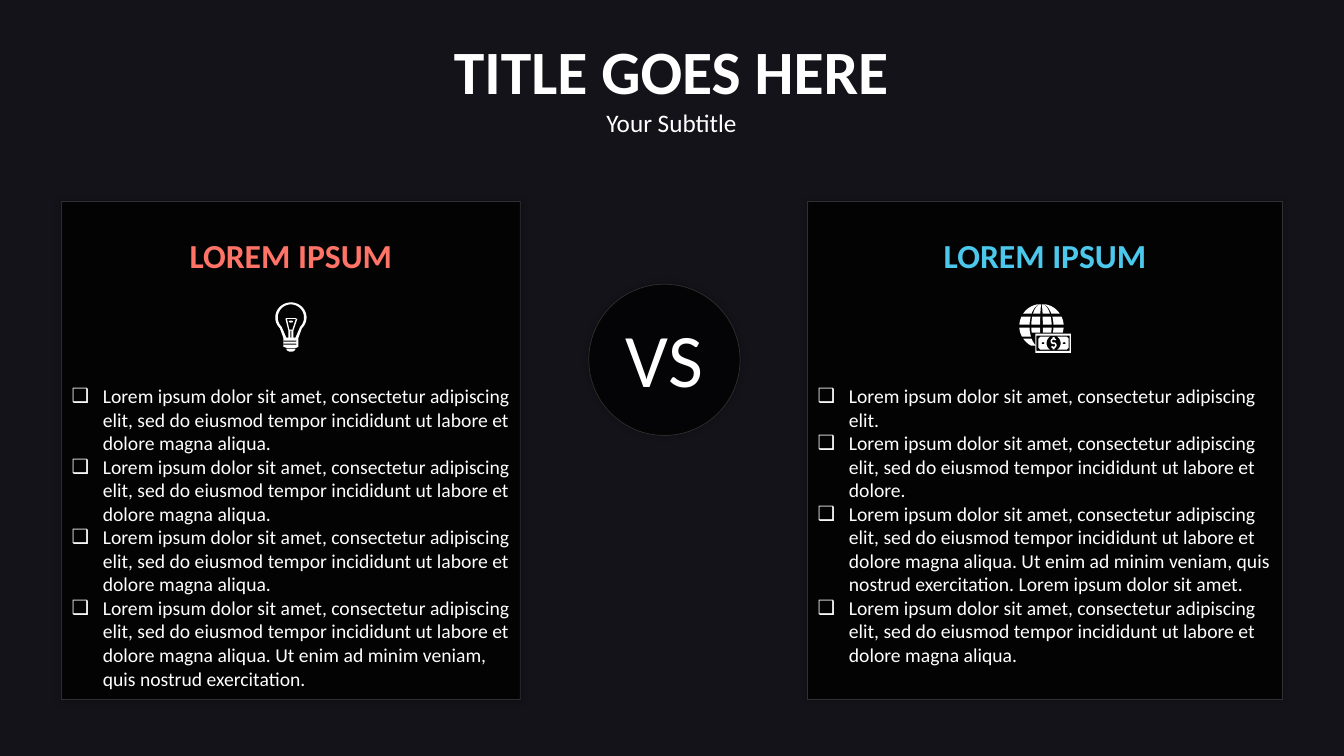
from math import cos, radians, sin, sqrt

from lxml import etree
from pptx import Presentation
from pptx import util as u
from pptx.dml.color import RGBColor
from pptx.enum import shapes, text
from pptx.oxml.ns import qn

# Content
TITLE = "TITLE GOES HERE"
SUBTITLE = "Your Subtitle"
VERSUS = "VS"
LOREM = "Lorem ipsum dolor sit amet, consectetur adipiscing elit"
LABORE = LOREM + ", sed do eiusmod tempor incididunt ut labore et dolore"
ALIQUA = LABORE + " magna aliqua."
VENIAM = ALIQUA + " Ut enim ad minim veniam, quis nostrud exercitation."
CARDS = [
    {"heading": "LOREM IPSUM", "colour": "coral", "left": 0.61, "width": 4.55,
     "points": [ALIQUA, ALIQUA, ALIQUA, VENIAM]},
    {"heading": "LOREM IPSUM", "colour": "sky", "left": 8.01, "width": 4.71,
     "points": [LOREM + ".", LABORE + ".",
                VENIAM + " Lorem ipsum dolor sit amet.", ALIQUA]},
]
SLIDE_SIZE = (13.33, 7.5)


class Theme:
    font = "Calibri"
    colours = {name: RGBColor.from_string(value) for name, value in {
        "background": "524E67", "black": "000000", "white": "FFFFFF",
        "coral": "FF7467", "sky": "4CC8EC"}.items()}
    title, subtitle, versus, heading, body = 44, 18, 54, 24, 14
    outline = 0.5
    card_opacity, circle_opacity, line_opacity, shadow_opacity = 75, 70, 15, 40


# Helpers
def box(left, top, width, height):
    return [u.Inches(value) for value in (left, top, width, height)]


def place(shape, left, top, width, height):
    shape.left, shape.top, shape.width, shape.height = box(left, top, width, height)


def write(shape, lines, align=text.PP_ALIGN.CENTER, bullet=None):
    """Fill a text shape with (words, size, colour, bold) lines."""
    frame = shape.text_frame
    frame.word_wrap = True
    frame.auto_size = text.MSO_AUTO_SIZE.NONE
    frame.vertical_anchor = text.MSO_ANCHOR.TOP
    for index, (words, size, colour, bold) in enumerate(lines):
        paragraph = frame.add_paragraph() if index else frame.paragraphs[0]
        paragraph.text = words
        if bullet:
            properties = paragraph._p.get_or_add_pPr()
            properties.set("marL", str(u.Inches(0.31)))
            properties.set("indent", str(-u.Inches(0.31)))
            etree.SubElement(properties, qn("a:buChar"), char=bullet)
        paragraph.alignment = align
        paragraph.space_before = u.Pt(0)
        font = paragraph.font
        font.name, font.size, font.bold = Theme.font, u.Pt(size), bold
        font.color.rgb = Theme.colours[colour]


def set_opacity(colour_parent, percent):
    colour = next(colour_parent.iter(qn("a:srgbClr")))
    etree.SubElement(colour, qn("a:alpha"), val=str(percent * 1000))


def add_veil(slide, kind, bounds, opacity):
    """Translucent black shape without an outline."""
    veil = slide.shapes.add_shape(kind, *box(*bounds))
    veil.fill.solid()
    veil.fill.fore_color.rgb = Theme.colours["black"]
    set_opacity(veil._element.spPr.find(qn("a:solidFill")), opacity)
    veil.line.fill.background()
    veil.shadow.inherit = False
    return veil


def add_panel(slide, kind, bounds, opacity):
    """Veil with a faint outline and a soft shadow."""
    panel = add_veil(slide, kind, bounds, opacity)
    panel.line.color.rgb = Theme.colours["white"]
    panel.line.width = u.Pt(Theme.outline)
    properties = panel._element.spPr
    set_opacity(properties.find(qn("a:ln")), Theme.line_opacity)
    shadow = etree.SubElement(properties.find(qn("a:effectLst")), qn("a:outerShdw"),
                              blurRad=str(u.Pt(5)), dist="0", dir="0")
    etree.SubElement(shadow, qn("a:srgbClr"), val=str(Theme.colours["black"]))
    set_opacity(shadow, Theme.shadow_opacity)
    return panel


def arc(x, y, rx, ry, start=0, end=360, steps=40):
    angles = [radians(start + (end - start) * i / steps) for i in range(steps + 1)]
    return [(x + rx * cos(a), y + ry * sin(a)) for a in angles]


def rectangle(left, top, right, bottom):
    return [(left, top), (right, top), (right, bottom), (left, bottom)]


def add_outline(group, *contours):
    """One white freeform; a contour inside another cuts a hole."""
    contours = [[(u.Inches(x), u.Inches(y)) for x, y in c] for c in contours]
    builder = group.shapes.build_freeform(*contours[0][0], scale=1.0)
    for index, contour in enumerate(contours):
        if index:
            builder.move_to(*contour[0])
        builder.add_line_segments(contour[1:], close=True)
    outline = builder.convert_to_shape()
    outline.fill.solid()
    outline.fill.fore_color.rgb = Theme.colours["white"]
    outline.line.fill.background()
    outline.shadow.inherit = False


def add_bulb(slide):
    group = slide.shapes.add_group_shape()
    x, y = 2.885, 3.15
    glass = arc(x, y, 0.155, 0.15, 135, 405) + [
        (2.96, 3.35), (2.96, 3.44), (2.94, 3.45), (2.84, 3.45), (2.81, 3.44), (2.81, 3.35)]
    inside = arc(x, y, 0.13, 0.13, 135, 405) + [(2.93, 3.35), (2.84, 3.35)]
    filament = [(2.83, 3.16), (2.95, 3.16), (2.91, 3.28), (2.91, 3.35),
                (2.86, 3.35), (2.86, 3.28)]
    gap = [(2.845, 3.16), (2.935, 3.16), (2.9, 3.27), (2.87, 3.27)]
    grooves = [rectangle(2.81, top, 2.94, top + 0.01) for top in (3.38, 3.41)]
    add_outline(group, glass, inside, filament, gap,
                rectangle(2.88, 3.28, 2.89, 3.35), *grooves)
    add_outline(group, arc(x, 3.46, 0.045, 0.03, 0, 180))
    add_outline(group, arc(x, 3.19, 0.02, 0.01))
    add_outline(group, rectangle(2.84, 3.155, 2.94, 3.165))


def add_globe_and_note(slide):
    group = slide.shapes.add_group_shape()

    # Dollar sign: two mirrored half rings joined into an S, with a stub at each end
    x, y = 10.45, 3.405

    def mirror(points):
        return [(2 * x - px, 2 * y - py) for px, py in points]

    outer, inner = (arc(x, 3.385, r, r, 330, 90) for r in (0.03, 0.015))
    stub = rectangle(x - 0.01, 3.345, x + 0.01, 3.355)
    add_outline(group, outer + mirror(inner)[::-1] + mirror(outer) + inner[::-1],
                stub, mirror(stub))

    # Note frame and the two fields beside the dollar sign
    add_outline(group, rectangle(10.27, 3.31, 10.62, 3.5),
                rectangle(10.28, 3.33, 10.61, 3.48))
    right_field = arc(x, y, 0.07, 0.075, -60, 60) + [
        (10.58, 3.47), (10.6, 3.45), (10.6, 3.36), (10.58, 3.34)]
    dot = arc(10.555, y, 0.015, 0.01)
    add_outline(group, mirror(right_field), mirror(dot))
    add_outline(group, right_field, dot)

    # Globe cells: bands of latitude cut by meridians, leaving room for the note
    x, y, radius, steps = 10.33, 3.235, 0.22, 8
    columns = [(-1, -0.54), (-0.46, -0.06), (0.06, 0.46), (0.54, 1)]
    bands = [(3.02, [3.11] * 4), (3.14, [3.22] * 4),
             (3.25, [3.34, 3.3, 3.3, 3.3]), (3.36, [3.43])]

    def meridian(share, top, bottom):
        heights = [top + (bottom - top) * i / steps for i in range(steps + 1)]
        return [(x + share * sqrt(max(0, radius ** 2 - (h - y) ** 2)), h) for h in heights]

    for top, bottoms in bands:
        for (west, east), bottom in zip(columns, bottoms):
            add_outline(group, meridian(west, top, bottom) + meridian(east, top, bottom)[::-1])


def main():
    presentation = Presentation()
    presentation.slide_width, presentation.slide_height = map(u.Inches, SLIDE_SIZE)
    slide = presentation.slides.add_slide(presentation.slide_layouts.get_by_name("Comparison"))
    title, *slots = slide.placeholders

    # Background with a dark veil
    slide.background.fill.solid()
    slide.background.fill.fore_color.rgb = Theme.colours["background"]
    veil = add_veil(slide, shapes.MSO_SHAPE.RECTANGLE, (0, 0, *SLIDE_SIZE), Theme.card_opacity)
    title._element.addprevious(veil._element)

    # Title and subtitle
    place(title, 3.65, 0.28, 6.02, 1.14)
    write(title, [(TITLE, Theme.title, "white", True),
                  (SUBTITLE, Theme.subtitle, "white", False)])

    # Two cards, each with a heading and a list
    for card, heading, points in zip(CARDS, slots[::2], slots[1::2]):
        left, width = card["left"], card["width"]
        panel = add_panel(slide, shapes.MSO_SHAPE.RECTANGLE, (left, 2, width, 4.94),
                          Theme.card_opacity)
        heading._element.addprevious(panel._element)
        place(heading, left, 2.28, width, 0.5)
        write(heading, [(card["heading"], Theme.heading, card["colour"], True)])
        place(points, left, 3.76, width, 3.16)
        write(points, [(point, Theme.body, "white", False) for point in card["points"]],
              text.PP_ALIGN.LEFT, "❑")

    # Icons
    add_bulb(slide)
    add_globe_and_note(slide)

    # Versus badge
    add_panel(slide, shapes.MSO_SHAPE.OVAL, (5.84, 2.82, 1.5, 1.5), Theme.circle_opacity)
    versus = slide.shapes.add_textbox(*box(5.59, 3.05, 2, 1.04))
    write(versus, [(VERSUS, Theme.versus, "white", False)])

    presentation.save("out.pptx")


if __name__ == "__main__":
    main()
